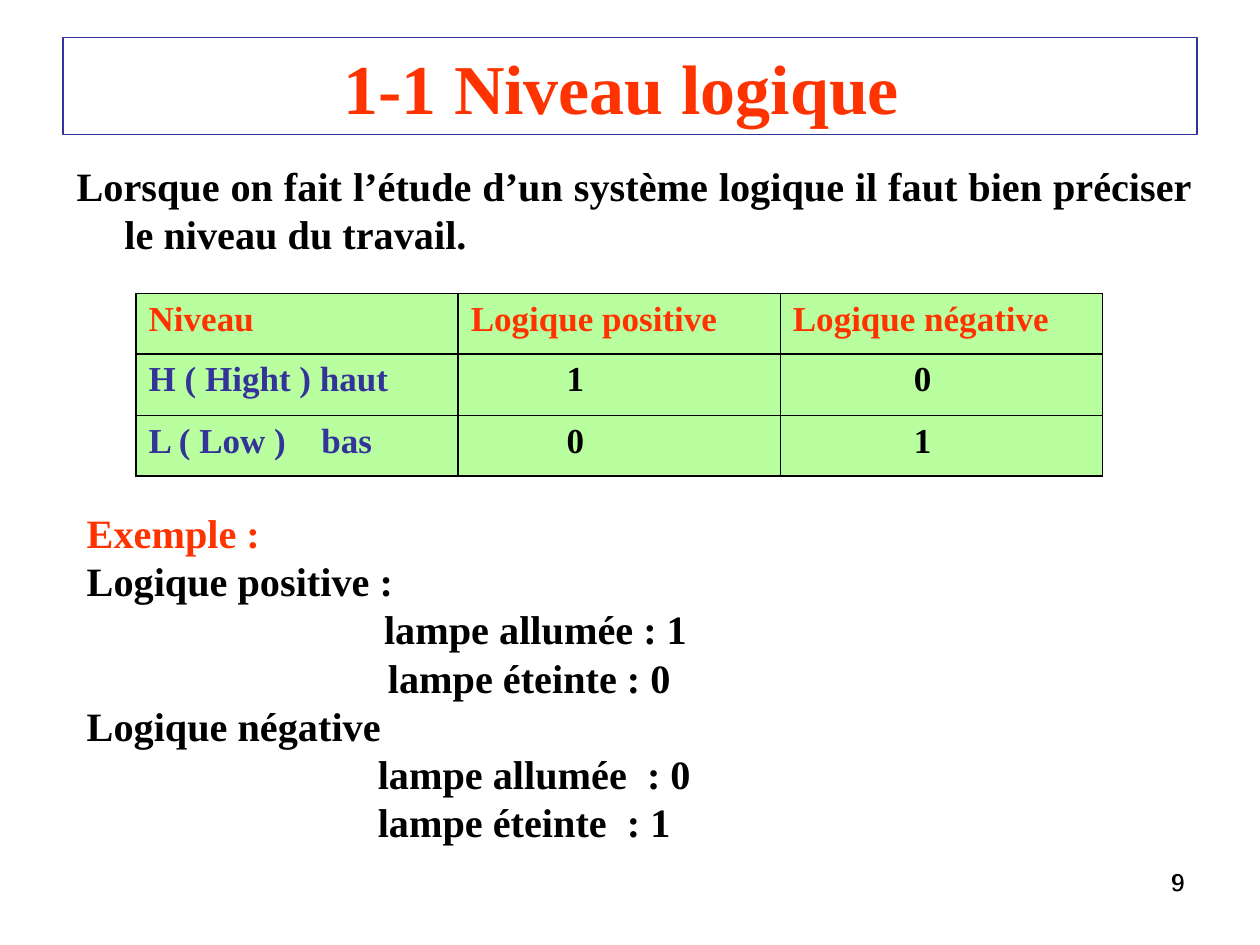
"""Build the slide on logic levels, with its table and lamp example."""
import pptx
import pptx.dml.color
import pptx.enum.shapes
import pptx.enum.text
import pptx.oxml
import pptx.oxml.ns
import pptx.util
from pptx.util import Inches

RED, BLUE, BLACK, GREEN, WHITE = "FF3300", "333399", "000000", "BAFF9F", "FFFFFF"
ALIGN = pptx.enum.text.PP_ALIGN
ANCHOR = pptx.enum.text.MSO_ANCHOR
RECT = pptx.enum.shapes.MSO_SHAPE.RECTANGLE
NS = pptx.oxml.ns.nsdecls("a")


def paint(color, code):
    color.rgb = pptx.dml.color.RGBColor.from_string(code)


def write(para, text, size, code, bold=True, face="Times New Roman"):
    run = para.add_run()
    run.text = text
    run.font.size = pptx.util.Pt(size)
    run.font.bold = bold
    run.font.name = face
    paint(run.font.color, code)


deck = pptx.Presentation()
deck.slide_width, deck.slide_height = Inches(10), Inches(7.5)
slide = deck.slides.add_slide(deck.slide_layouts[6])
shapes = slide.shapes

for face in ("Arial", "Times New Roman"):
    box = shapes.add_textbox(Inches(7.17), Inches(6.83), Inches(2.33), Inches(0.52))
    box.text_frame.word_wrap = True
    para = box.text_frame.paragraphs[0]
    para.alignment = ALIGN.RIGHT
    write(para, "9", 14, BLACK, False, face)

frames = []
for left, top, wide, high, edge, anchor in (
    (0.5, 0.3, 9, 0.77, BLUE, ANCHOR.MIDDLE),
    (0.51, 1.23, 9.06, 0.87, WHITE, ANCHOR.TOP),
    (0.59, 3.99, 9.06, 2.8, WHITE, ANCHOR.TOP),
):
    box = shapes.add_shape(RECT, Inches(left), Inches(top), Inches(wide), Inches(high))
    box.shadow.inherit = False
    box.fill.background()
    paint(box.line.color, edge)
    box.line.width = pptx.util.Pt(0.75)
    box.text_frame.word_wrap = True
    box.text_frame.vertical_anchor = anchor
    frames.append(box.text_frame)
title, intro, sample = frames

para = title.paragraphs[0]
para.alignment = ALIGN.CENTER
write(para, "1-1 Niveau logique ", 40, RED)

para = intro.paragraphs[0]
para.alignment = ALIGN.JUSTIFY
para.line_spacing = pptx.util.Pt(27.6)
props = para._p.get_or_add_pPr()
props.set("marL", str(Inches(0.38)))
props.set("indent", str(Inches(-0.38)))
write(para, "Lorsque on fait l’étude d’un système logique il faut bien préciser "
      "le niveau du travail.", 23, BLACK)

lines = [
    ("Exemple :", 0, RED),
    ("Logique positive :", 0, BLACK),
    ("lampe allumée : 1", 2.36, BLACK),
    ("lampe éteinte : 0", 2.39, BLACK),
    ("Logique négative", 0, BLACK),
    ("lampe allumée  : 0", 2.31, BLACK),
    ("lampe éteinte  : 1", 2.31, BLACK),
]
sample.margin_top = Inches(0.04)
for num, (text, left, code) in enumerate(lines):
    para = sample.add_paragraph() if num else sample.paragraphs[0]
    para.alignment = ALIGN.LEFT
    para.line_spacing = pptx.util.Pt(27.6)
    para._p.get_or_add_pPr().set("marL", str(Inches(left)))
    write(para, text, 23, code)

rows = [
    ("Niveau", "Logique positive", "Logique négative"),
    ("H ( Hight ) haut", "1", "0"),
    ("L ( Low )\tbas", "0", "1"),
]
grid = shapes.add_table(3, 3, Inches(1.08), Inches(2.33), Inches(7.67), Inches(1.45))
table = grid.table
for col in table.columns:
    col.width = Inches(7.67 / 3)
for row, high in zip(table.rows, (0.48, 0.49, 0.48)):
    row.height = Inches(high)
for r, texts in enumerate(rows):
    for c, text in enumerate(texts):
        cell = table.cell(r, c)
        if r:
            cell.margin_left = Inches((0.1, 0.86, 1.06)[c])
        para = cell.text_frame.paragraphs[0]
        write(para, text, 20, RED if r == 0 else BLACK if c else BLUE)
        if "\t" in text:
            para._p.get_or_add_pPr().append(pptx.oxml.parse_xml(
                f'<a:tabLst {NS}><a:tab pos="{Inches(1.37)}" algn="l"/></a:tabLst>'))
        props = cell._tc.get_or_add_tcPr()
        for side in ("lnL", "lnR", "lnT", "lnB"):
            props.append(pptx.oxml.parse_xml(
                f'<a:{side} {NS} w="12700"><a:solidFill><a:srgbClr val="{BLACK}"/>'
                f'</a:solidFill></a:{side}>'))
        cell.fill.solid()
        paint(cell.fill.fore_color, GREEN)

deck.save("out.pptx")
